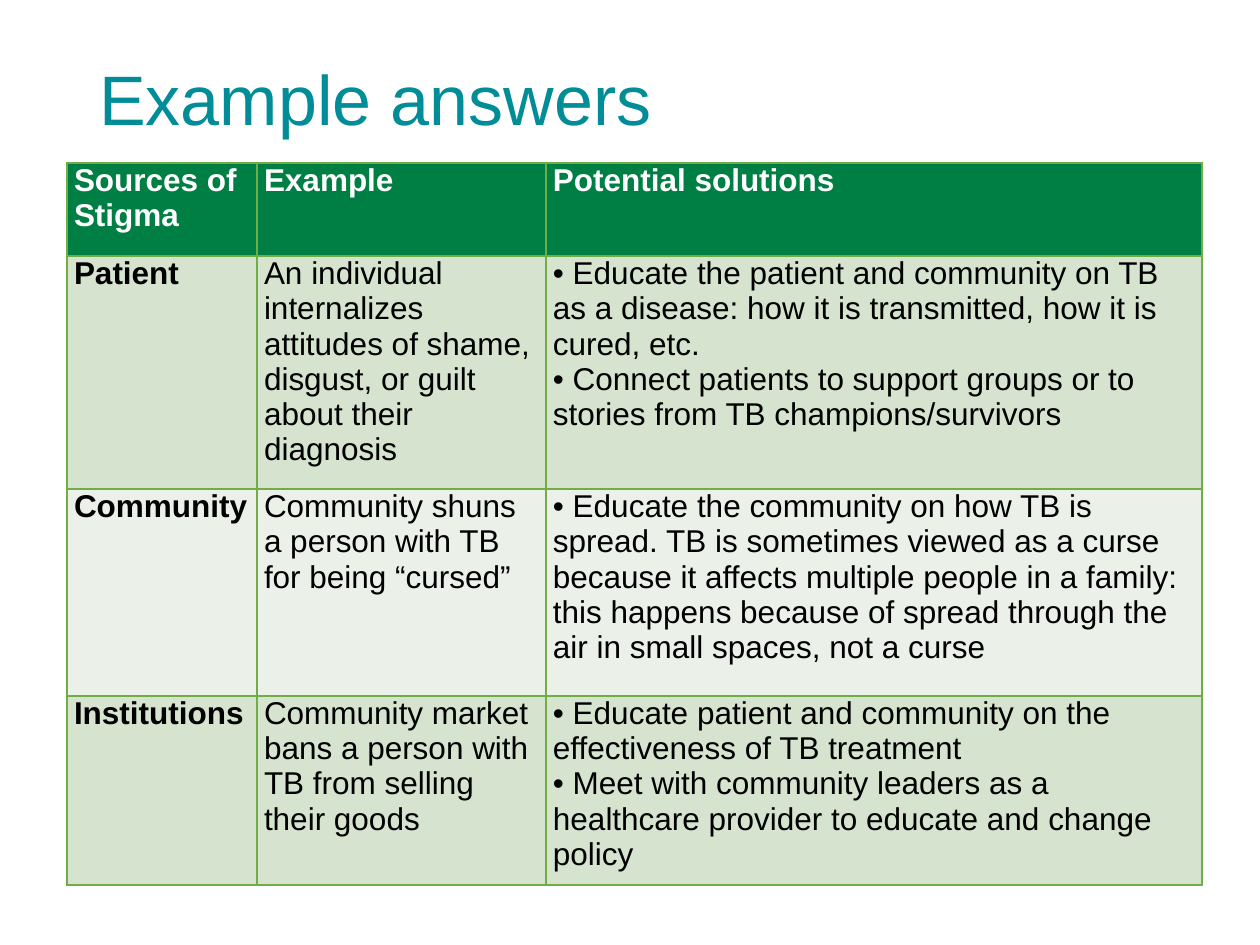
from lxml.etree import SubElement
from pptx import Presentation
from pptx.dml.color import RGBColor
from pptx.enum.text import MSO_ANCHOR, PP_ALIGN as Align
from pptx.oxml.ns import qn
from pptx.util import Emu, Pt

PX = 914400 / 126
FONT = "Arial"
COLORS = {
    "title": "008D98",
    "header": "007F44",
    "header_text": "FFFFFF",
    "text": "000000",
    "band_dark": "D5E3CF",
    "band_light": "EBF1E9",
    "border": "70AD47",
}
COLUMN_WIDTHS = [190, 289, 656]
ROW_HEIGHTS = [93, 233, 207, 177]

# Each cell is a list of paragraphs
STIGMA_ROWS = [
    [["Sources of Stigma"], ["Example"], ["Potential solutions"]],
    [
        ["Patient"],
        ["An individual internalizes",
         "attitudes of shame, disgust, or guilt about their diagnosis"],
        ["• Educate the patient and community on TB as a disease: "
         "how it is transmitted, how it is cured, etc.",
         "• Connect patients to support groups or to stories from "
         "TB champions/survivors"],
    ],
    [
        ["Community"],
        ["Community shuns a person with TB for being “cursed”"],
        ["• Educate the community on how TB is spread. TB is sometimes "
         "viewed as a curse because it affects multiple people in a family: "
         "this happens because of spread through the air in small spaces, "
         "not a curse"],
    ],
    [
        ["Institutions"],
        ["Community market bans a person with TB from selling their goods"],
        ["• Educate patient and community on the effectiveness of "
         "TB treatment",
         "• Meet with community leaders as a healthcare provider to educate "
         "and change policy"],
    ],
]


def px(length):
    return Emu(round(length * PX))


def write(frame, paragraphs, *, size, color, bold=False, align=Align.LEFT,
          spacing=None):
    frame.word_wrap = True
    for index, words in enumerate(paragraphs):
        line = frame.add_paragraph() if index else frame.paragraphs[0]
        line.alignment = align
        if spacing:
            line.line_spacing = spacing
        run = line.add_run()
        run.text = words
        run.font.name = FONT
        run.font.size = Pt(size)
        run.font.bold = bold
        run.font.color.rgb = RGBColor.from_string(COLORS[color])


class SlideBuilder:
    def __init__(self, slide):
        self.slide = slide

    def title(self, words, left, top, width, height):
        box = self.slide.shapes.add_textbox(px(left), px(top), px(width), px(height))
        box.text_frame.vertical_anchor = MSO_ANCHOR.MIDDLE
        write(box.text_frame, [words], size=40, color="title", spacing=0.9)

    def table(self, rows, left, top, widths, heights):
        table = self.slide.shapes.add_table(
            len(heights), len(widths), px(left), px(top),
            px(sum(widths)), px(sum(heights))).table
        for column, width in zip(table.columns, widths):
            column.width = px(width)
        for row, height in zip(table.rows, heights):
            row.height = px(height)
        for r, row in enumerate(rows):
            for c, paragraphs in enumerate(row):
                self.cell(table.cell(r, c), paragraphs, r, c)

    def cell(self, cell, paragraphs, row, column):
        header = row == 0
        band = "header" if header else "band_dark" if row % 2 else "band_light"
        cell.margin_left = cell.margin_right = px(7)
        cell.margin_top = cell.margin_bottom = 0
        label = header or column == 0
        justified = header != (column == 0)
        write(cell.text_frame, paragraphs, size=18, bold=label,
              color="header_text" if header else "text",
              align=Align.JUSTIFY if justified else Align.LEFT)
        self.borders(cell)
        cell.fill.solid()
        cell.fill.fore_color.rgb = RGBColor.from_string(COLORS[band])

    def borders(self, cell):
        properties = cell._tc.get_or_add_tcPr()
        for side in ("a:lnL", "a:lnR", "a:lnT", "a:lnB"):
            line = SubElement(properties, qn(side), w=str(Pt(1)))
            fill = SubElement(line, qn("a:solidFill"))
            SubElement(fill, qn("a:srgbClr"), val=COLORS["border"])


def main():
    deck = Presentation()
    deck.slide_width, deck.slide_height = px(1260), px(945)
    builder = SlideBuilder(deck.slides.add_slide(deck.slide_layouts[6]))

    # Heading
    builder.title("Example answers", 87, 50, 1086, 106)

    # Stigma sources, examples and solutions
    builder.table(STIGMA_ROWS, 67, 163, COLUMN_WIDTHS, ROW_HEIGHTS)

    deck.save("out.pptx")


if __name__ == "__main__":
    main()
